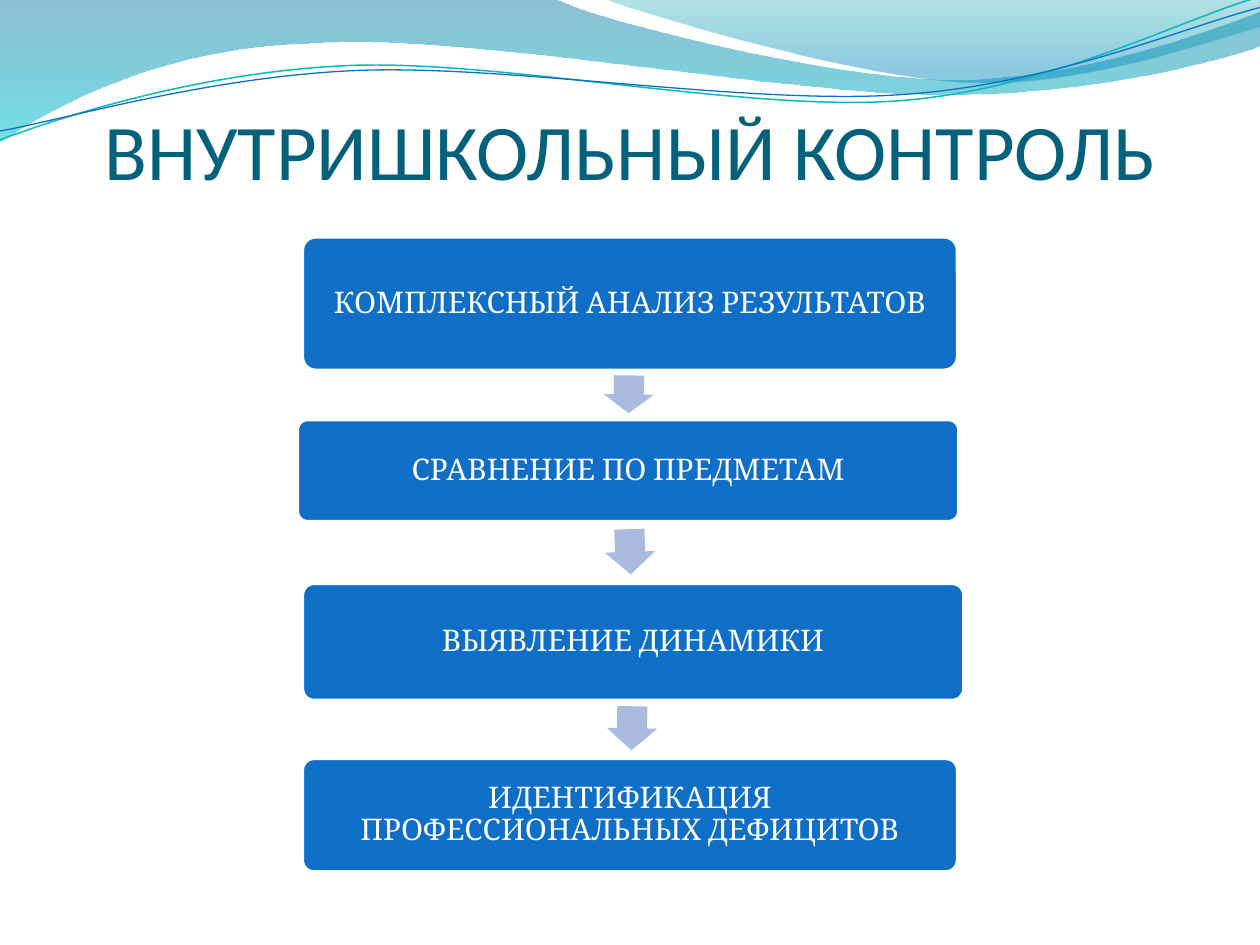
import math
from pptx import Presentation
from pptx import util as u
from pptx.dml.color import RGBColor
from pptx.enum import shapes, text
from pptx.oxml.ns import qn
from lxml import etree

BLUE, WHITE, PALE, TEAL = "0F6FC6", "FFFFFF", "ABBBDF", "04617B"
TILT = 2.7

BAND = [(0, 0), (4.4, -0.01), (4.76, 0.17, 6.64, 0.63, 7.58, 0.63),
        (8.53, 0.63, 9.58, 0.26, 10, 0.09), (10.01, 0.36),
        (9.83, 0.44, 8.7, 0.76, 7.46, 0.75),
        (6.22, 0.75, 3.82, 0.28, 2.57, 0.34),
        (1.29, 0.36, 0.46, 0.83, -0.01, 1.13), (0, 0)]
CREST = [(4.79, -0.01), (5.09, 0.11, 6.82, 0.62, 7.69, 0.65),
         (8.56, 0.69, 9.61, 0.32, 10, 0.21), (10, 0), (4.79, -0.01)]
UPPER = [(0, 1.11), (0.48, 0.93, 1.58, 0.57, 2.77, 0.52),
         (3.95, 0.47, 5.93, 0.89, 7.13, 0.8),
         (8.33, 0.71, 9.38, 0.15, 9.98, -0.02)]
LOWER = [(0, 1.04), (0.47, 0.96, 1.64, 0.61, 2.83, 0.56),
         (4.03, 0.51, 5.97, 0.84, 7.17, 0.75),
         (8.36, 0.67, 9.41, 0.21, 10, 0.06)]

BOXES = [
    ("КОМПЛЕКСНЫЙ АНАЛИЗ РЕЗУЛЬТАТОВ", 2.4, 1.88, 5.2, 1.06),
    ("СРАВНЕНИЕ ПО ПРЕДМЕТАМ", 2.36, 3.33, 5.25, 0.81),
    ("ВЫЯВЛЕНИЕ ДИНАМИКИ", 2.4, 4.63, 5.25, 0.93),
    ("ИДЕНТИФИКАЦИЯ ПРОФЕССИОНАЛЬНЫХ ДЕФИЦИТОВ", 2.4, 6.02, 5.2, 0.9),
]
ARROWS = [(4.84, 2.93, 0.3, 90.8), (4.82, 4.18, 0.36, 88.1),
          (4.84, 5.58, 0.35, 91.1)]


def color(code):
    return RGBColor.from_string(code)


def pairs(part):
    return list(zip(part[::2], part[1::2]))


def spin(part, mid):
    cos, sin = math.cos(math.radians(TILT)), math.sin(math.radians(TILT))
    turned = []
    for x, y in pairs(part):
        dx, dy = x - mid[0], y - mid[1]
        turned += [mid[0] + dx * cos - dy * sin, mid[1] + dx * sin + dy * cos]
    return tuple(turned)


def add_curve(slide, parts, close):
    points = [tuple(map(u.Inches, spot)) for part in parts for spot in pairs(part)]
    pen = slide.shapes.build_freeform(*points[0])
    pen.add_line_segments(points[1:], close=close)
    shape = pen.convert_to_shape()
    shape.shadow.inherit = False
    lines = iter(list(shape.element.iter(qn("a:lnTo"))))
    for part in parts[1:]:
        group = [next(lines) for _ in pairs(part)]
        if len(group) == 3:
            bend = etree.Element(qn("a:cubicBezTo"))
            group[0].addprevious(bend)
            for line in group:
                bend.append(line[0])
                line.getparent().remove(line)
    return shape


def add_wave(slide, parts, stops):
    shape = add_curve(slide, parts, True)
    shape.line.fill.background()
    shape.fill.gradient()
    shape.fill.gradient_angle = 270
    for stop, (place, code, alpha) in zip(shape.fill.gradient_stops, stops):
        stop.position = place
        stop.color.rgb = color(code)
    for tint, (place, code, alpha) in zip(
            shape.element.spPr.iter(qn("a:srgbClr")), stops):
        etree.SubElement(tint, qn("a:alpha")).set("val", str(alpha * 1000))


def add_line(slide, parts, mid, code, width):
    shape = add_curve(slide, [spin(part, mid) for part in parts], False)
    shape.rotation = 360 - TILT
    shape.fill.background()
    shape.line.color.rgb = color(code)
    shape.line.width = u.Pt(width)


def write(shape, words, font, size, code, anchor, inset):
    frame = shape.text_frame
    frame.word_wrap = True
    frame.vertical_anchor = anchor
    (frame.margin_left, frame.margin_top,
     frame.margin_right, frame.margin_bottom) = map(u.Inches, inset)
    para = frame.paragraphs[0]
    para.alignment = text.PP_ALIGN.CENTER
    run = para.add_run()
    run.text = words
    run.font.name = font
    run.font.size = u.Pt(size)
    run.font.color.rgb = color(code)
    return para


def add_solid(slide, kind, spot, code, adjust):
    shape = slide.shapes.add_shape(kind, *map(u.Inches, spot))
    shape.shadow.inherit = False
    shape.fill.solid()
    shape.fill.fore_color.rgb = color(code)
    for n, value in enumerate(adjust):
        shape.adjustments[n] = value
    return shape


def add_box(slide, words, *spot):
    kind = shapes.MSO_SHAPE.ROUNDED_RECTANGLE
    box = add_solid(slide, kind, spot, BLUE, [0.1])
    box.line.color.rgb = color(WHITE)
    box.line.width = u.Pt(2)
    para = write(box, words, "Cambria", 17, WHITE,
                 text.MSO_ANCHOR.MIDDLE, [0.1] * 4)
    para.line_spacing = 0.9


def add_arrow(slide, left, top, width, turn):
    kind = shapes.MSO_SHAPE.RIGHT_ARROW
    arrow = add_solid(slide, kind, (left, top, width, 0.4), PALE, [0.6, 0.5])
    arrow.line.fill.background()
    arrow.rotation = turn


def add_title(slide, words):
    title = slide.shapes.add_textbox(*map(u.Inches, (0.5, 0.77, 9, 0.79)))
    write(title, words, "Calibri", 45, TEAL,
          text.MSO_ANCHOR.BOTTOM, (0, 0.05, 0, 0))


def main():
    deck = Presentation()
    deck.slide_width, deck.slide_height = u.Inches(10), u.Inches(7.5)
    slide = deck.slides.add_slide(deck.slide_layouts[6])
    add_wave(slide, BAND, [(0, "0074A1", 45), (1, "00C6CF", 55)])
    add_wave(slide, CREST, [(0, "00A1A9", 30), (0.8, "008BBF", 45)])
    add_line(slide, UPPER, (4.99, 0.58), "0AB8BF", 0.85)
    add_line(slide, LOWER, (5, 0.59), BLUE, 0.75)
    add_title(slide, "ВНУТРИШКОЛЬНЫЙ КОНТРОЛЬ")
    for box in BOXES:
        add_box(slide, *box)
    for arrow in ARROWS:
        add_arrow(slide, *arrow)
    deck.save("out.pptx")


if __name__ == "__main__":
    main()
